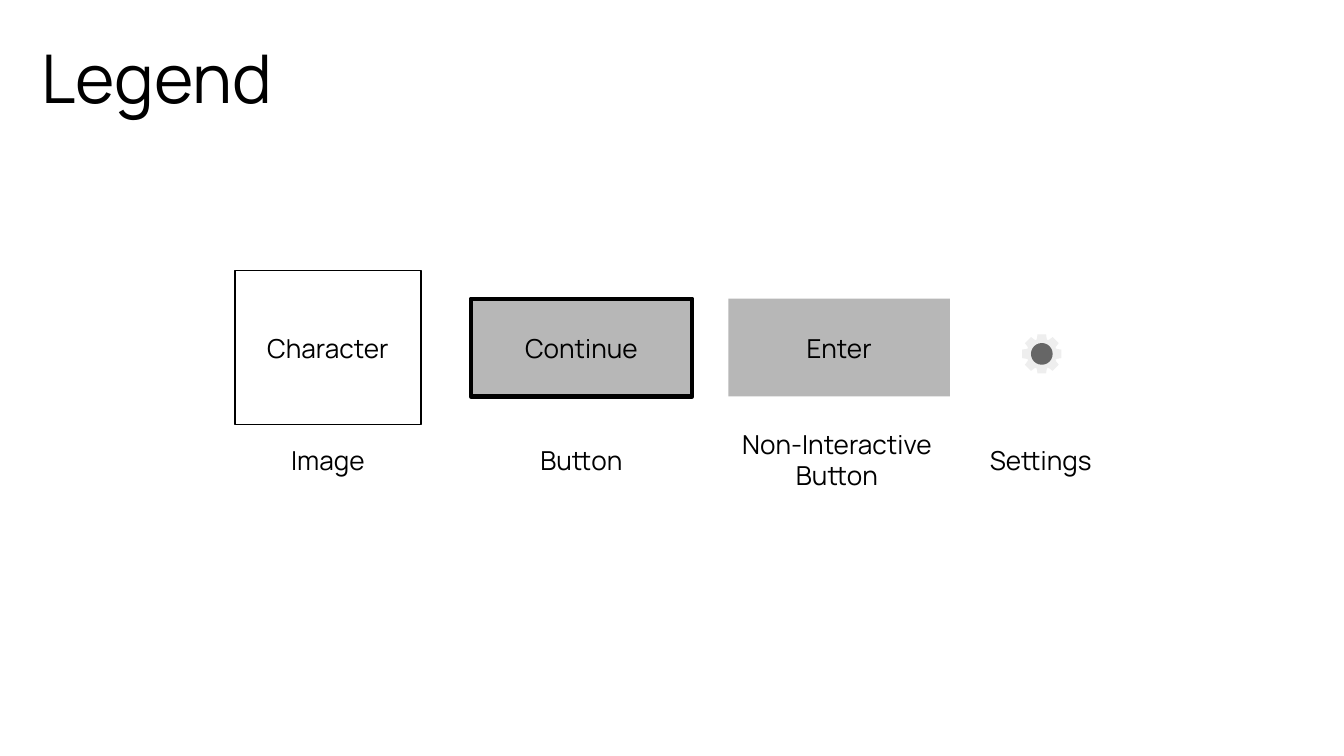
from pptx import Presentation
from pptx.dml.color import RGBColor
from pptx.enum.shapes import MSO_SHAPE
from pptx.enum.text import MSO_ANCHOR, PP_ALIGN
from pptx.util import Cm, Pt

COLORS = {"ink": "000000", "paper": "FFFFFF", "button": "B7B7B7",
          "gear": "EEEEEE", "dot": "666666"}


def write(shape, text, size=14, align=PP_ALIGN.CENTER):
    frame = shape.text_frame
    frame.word_wrap = True
    frame.vertical_anchor = MSO_ANCHOR.MIDDLE
    frame.margin_left = frame.margin_right = Cm(0.25)
    frame.margin_top = frame.margin_bottom = Cm(0.25)
    para = frame.paragraphs[0]
    para.alignment = align
    run = para.add_run()
    run.text = text
    run.font.name = "Manrope"
    run.font.size = Pt(size)
    run.font.color.rgb = RGBColor.from_string(COLORS["ink"])


def draw(shapes, kind, mid, width, height, fill, line=0):
    """Add a filled shape centred on mid, in cm; line is a width in points."""
    x, y = mid
    shape = shapes.add_shape(kind, Cm(x - width / 2), Cm(y - height / 2),
                             Cm(width), Cm(height))
    shape.shadow.inherit = False
    shape.fill.solid()
    shape.fill.fore_color.rgb = RGBColor.from_string(COLORS[fill])
    if line:
        shape.line.width = Pt(line)
        shape.line.color.rgb = RGBColor.from_string(COLORS["ink"])
    else:
        shape.line.fill.background()
    return shape


deck = Presentation()
deck.slide_width, deck.slide_height = Cm(25.4), Cm(14.29)
slide = deck.slides.add_slide(deck.slide_layouts[6])
shapes = slide.shapes

title = shapes.add_textbox(Cm(0.53), Cm(0.28), Cm(23.67), Cm(2.34))
write(title, "Legend", 36, PP_ALIGN.LEFT)

# Sample boxes: text, centre, width, height, fill, line
boxes = [
    ("Character", 6.2, 3.51, 2.92, "paper", 0.75),
    ("Continue", 10.99, 4.19, 1.85, "button", 2.25),
    ("Enter", 15.86, 4.19, 1.85, "button", 0),
]
for text, x, width, height, fill, line in boxes:
    box = draw(shapes, MSO_SHAPE.RECTANGLE, (x, 6.57), width, height, fill, line)
    write(box, text)

# Settings gear: two crossed plaques and a hub
gear = shapes.add_group_shape().shapes
hub = (19.69, 6.69)
for turn in (0, 315):
    teeth = draw(gear, MSO_SHAPE.PLAQUE, hub, 0.74, 0.74, "gear")
    teeth.adjustments[0] = 0.39
    teeth.rotation = turn
draw(gear, MSO_SHAPE.OVAL, hub, 0.41, 0.41, "dot")

# Captions: text, centre, width
captions = [
    ("Image", 6.2, 2.51),
    ("Button", 10.99, 2.51),
    ("Non-Interactive Button", 15.82, 4.57),
    ("Settings", 19.67, 2.51),
]
for text, x, width in captions:
    label = shapes.add_textbox(Cm(x - width / 2), Cm(8.18), Cm(width), Cm(1.02))
    write(label, text)

deck.save("out.pptx")
